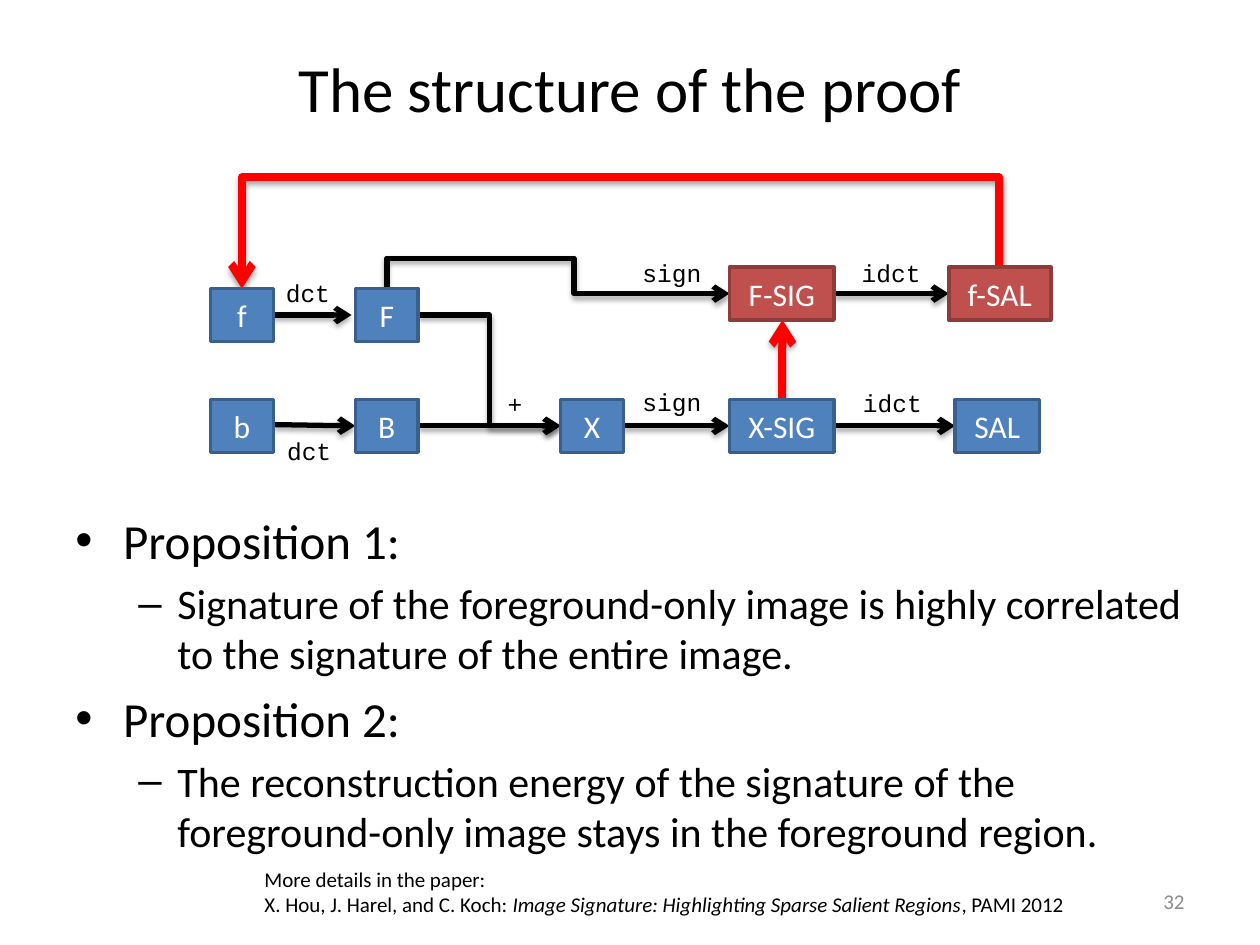
"""Build a slide on the structure of a proof, with a signal flow chart."""
from dataclasses import dataclass

from lxml.etree import SubElement
from pptx import Presentation
from pptx.dml.color import RGBColor
from pptx.enum.shapes import MSO_CONNECTOR, MSO_SHAPE
from pptx.enum.text import MSO_ANCHOR, PP_ALIGN
from pptx.oxml.ns import qn
from pptx.util import Inches, Pt

HUES = {
    "black": "000000", "white": "FFFFFF", "gray": "8C8C8C", "red": "FF0000",
    "blue": "4F81BD", "navy": "3A5F8C", "brick": "C0504D", "wine": "8E3B39",
}
HIGH, MID, LOW = 2.33, 2.5, 3.38
TALL = 0.42


@dataclass
class Node:
    """A box of the chart."""
    text: str
    left: float
    mid: float
    width: float = 0.5
    fill: str = "blue"
    edge: str = "navy"


@dataclass
class Wire:
    """An arrow, with turn, flips and bends if it is an elbow."""
    start: tuple[float, float]
    end: tuple[float, float]
    hue: str = "black"
    width: float = 3
    form: str = "line"
    turn: int = 0
    flips: str = ""
    bends: tuple[float, ...] = ()


@dataclass
class Label:
    """A box of plain text."""
    text: str
    left: float
    top: float
    width: float
    height: float = 0.34
    size: float = 14
    font: str = "Courier New"
    hue: str = "black"
    align: PP_ALIGN = PP_ALIGN.LEFT
    anchor: MSO_ANCHOR = MSO_ANCHOR.TOP


@dataclass
class Level:
    """The look of one list level."""
    size: int
    mark: str
    left: float
    hang: float


NODES = [
    Node("f", 1.67, MID), Node("b", 1.67, LOW),
    Node("F", 2.82, MID), Node("B", 2.82, LOW), Node("X", 4.45, LOW),
    Node("F-SIG", 5.79, HIGH, 0.83, "brick", "wine"),
    Node("SAL", 7.58, LOW, 0.67),
    Node("f-SAL", 7.53, HIGH, 0.81, "brick", "wine"),
    Node("X-SIG", 5.79, LOW, 0.83),
]
WIRES = [
    Wire((2.17, MID), (2.79, MID)),
    Wire((2.17, 3.37), (2.82, LOW)),
    Wire((3.32, MID), (4.45, LOW), form="bentConnector3", bends=(0.5,)),
    Wire((4.41, 0.95), (4.45, 3.67), form="bentConnector4",
         turn=270, flips="H", bends=(-6, 0.546)),
    Wire((4.94, LOW), (5.79, LOW)),
    Wire((6.62, LOW), (7.58, LOW)),
    Wire((3.32, LOW), (4.45, LOW)),
    Wire((6.62, HIGH), (7.53, HIGH)),
    Wire((4.84, -0.8), (5.01, 5.21), "red", 4.5, "bentConnector3",
         270, "HV", (-4.19,)),
    Wire((6.21, 3.17), (6.21, 2.54), "red", 4.5),
]
LABELS = [
    Label("The structure of the proof", 0.5, 0.3, 9, 0.78, 36, "Calibri",
          align=PP_ALIGN.CENTER, anchor=MSO_ANCHOR.MIDDLE),
    Label("32", 7.17, 6.95, 2.33, 0.4, 12, "Calibri", "gray",
          PP_ALIGN.RIGHT, MSO_ANCHOR.MIDDLE),
    Label("dct", 2.17, 2.16, 0.62), Label("dct", 2.18, 3.41, 0.62),
    Label("sign", 5, 2, 0.68), Label("sign", 5, 3.02, 0.68),
    Label("idct", 6.74, 2, 0.79), Label("idct", 6.75, 3.03, 0.79),
    Label("+", 3.93, 3.04, 0.41),
]
LEVELS = [Level(28, "•", 0.38, 0.38), Level(24, "–", 0.81, 0.31)]
POINTS = [
    (0, "Proposition 1:"),
    (1, "Signature of the foreground-only image is highly correlated "
        "to the signature of the entire image."),
    (0, "Proposition 2:"),
    (1, "The reconstruction energy of the signature of the "
        "foreground-only image stays in the foreground region."),
]
CITE = [
    ("X. Hou, J. Harel, and C. Koch: ", False),
    ("Image Signature: Highlighting Sparse Salient Regions", True),
    (", PAMI 2012", False),
]


def tint(hue: str) -> RGBColor:
    """Return the named colour."""
    return RGBColor.from_string(HUES[hue])


def style(para, size: float, font: str = "Calibri", hue: str = "black") -> None:
    """Format every run of a paragraph."""
    for run in para.runs:
        run.font.size, run.font.name = Pt(size), font
        run.font.color.rgb = tint(hue)


def add_text(slide, left: float, top: float, width: float, height: float):
    """Add an empty wrapping text box and return its frame."""
    spot = [Inches(n) for n in (left, top, width, height)]
    frame = slide.shapes.add_textbox(*spot).text_frame
    frame.word_wrap = True
    return frame


def add_label(slide, label: Label) -> None:
    """Draw one label."""
    frame = add_text(slide, label.left, label.top, label.width, label.height)
    frame.text, frame.vertical_anchor = label.text, label.anchor
    para = frame.paragraphs[0]
    para.alignment = label.align
    style(para, label.size, label.font, label.hue)


def add_node(slide, node: Node) -> None:
    """Draw one box."""
    spot = (node.left, node.mid - TALL / 2, node.width, TALL)
    box = slide.shapes.add_shape(MSO_SHAPE.RECTANGLE, *map(Inches, spot))
    box.shadow.inherit = False
    box.fill.solid()
    box.fill.fore_color.rgb = tint(node.fill)
    box.line.color.rgb, box.line.width = tint(node.edge), Pt(2)
    box.text_frame.text = node.text
    box.text_frame.vertical_anchor = MSO_ANCHOR.MIDDLE
    para = box.text_frame.paragraphs[0]
    para.alignment = PP_ALIGN.CENTER
    style(para, 18, hue="white")


def add_wire(slide, wire: Wire) -> None:
    """Draw one arrow with a soft shadow."""
    ends = map(Inches, wire.start + wire.end)
    line = slide.shapes.add_connector(MSO_CONNECTOR.STRAIGHT, *ends)
    line.line.color.rgb, line.line.width = tint(wire.hue), Pt(wire.width)
    props = line._element.spPr
    SubElement(props.find(qn("a:ln")), qn("a:tailEnd"), type="arrow")
    frame, geom = props.find(qn("a:xfrm")), props.find(qn("a:prstGeom"))
    geom.set("prst", wire.form)
    if wire.turn:
        frame.set("rot", str(wire.turn * 60000))
    for flip in wire.flips:
        frame.set(f"flip{flip}", "1")
    guides = geom.find(qn("a:avLst"))
    if guides is None:
        guides = SubElement(geom, qn("a:avLst"))
    for n, bend in enumerate(wire.bends, 1):
        SubElement(guides, qn("a:gd"), name=f"adj{n}",
                   fmla=f"val {round(bend * 100000)}")
    shade = SubElement(SubElement(props, qn("a:effectLst")), qn("a:outerShdw"),
                       blurRad=str(Pt(3.1)), dist=str(Pt(1.8)),
                       dir="5400000", rotWithShape="0")
    color = SubElement(shade, qn("a:srgbClr"), val=HUES["black"])
    SubElement(color, qn("a:alpha"), val="35000")


def add_points(slide) -> None:
    """Write the list of claims."""
    frame = add_text(slide, 0.5, 4, 9, 2.7)
    for n, (depth, text) in enumerate(POINTS):
        para = frame.add_paragraph() if n else frame.paragraphs[0]
        level = LEVELS[depth]
        para.text, para.level = text, depth
        para.space_before = Pt(level.size * 0.2)
        style(para, level.size)
        props = para._p.get_or_add_pPr()
        props.set("marL", str(Inches(level.left)))
        props.set("indent", str(-Inches(level.hang)))
        SubElement(props, qn("a:buFont"), typeface="Arial")
        SubElement(props, qn("a:buChar"), char=level.mark)


def add_cite(slide) -> None:
    """Write the source of the proof."""
    frame = add_text(slide, 2, 6.83, 6.72, 0.5)
    frame.text = "More details in the paper:"
    para = frame.add_paragraph()
    for text, slant in CITE:
        run = para.add_run()
        run.text, run.font.italic = text, slant
    for para in frame.paragraphs:
        style(para, 12)


deck = Presentation()
deck.slide_width, deck.slide_height = Inches(10), Inches(7.5)
slide = deck.slides.add_slide(deck.slide_layouts[6])
for wire in WIRES:
    add_wire(slide, wire)
for label in LABELS:
    add_label(slide, label)
for node in NODES:
    add_node(slide, node)
add_points(slide)
add_cite(slide)
deck.save("out.pptx")
